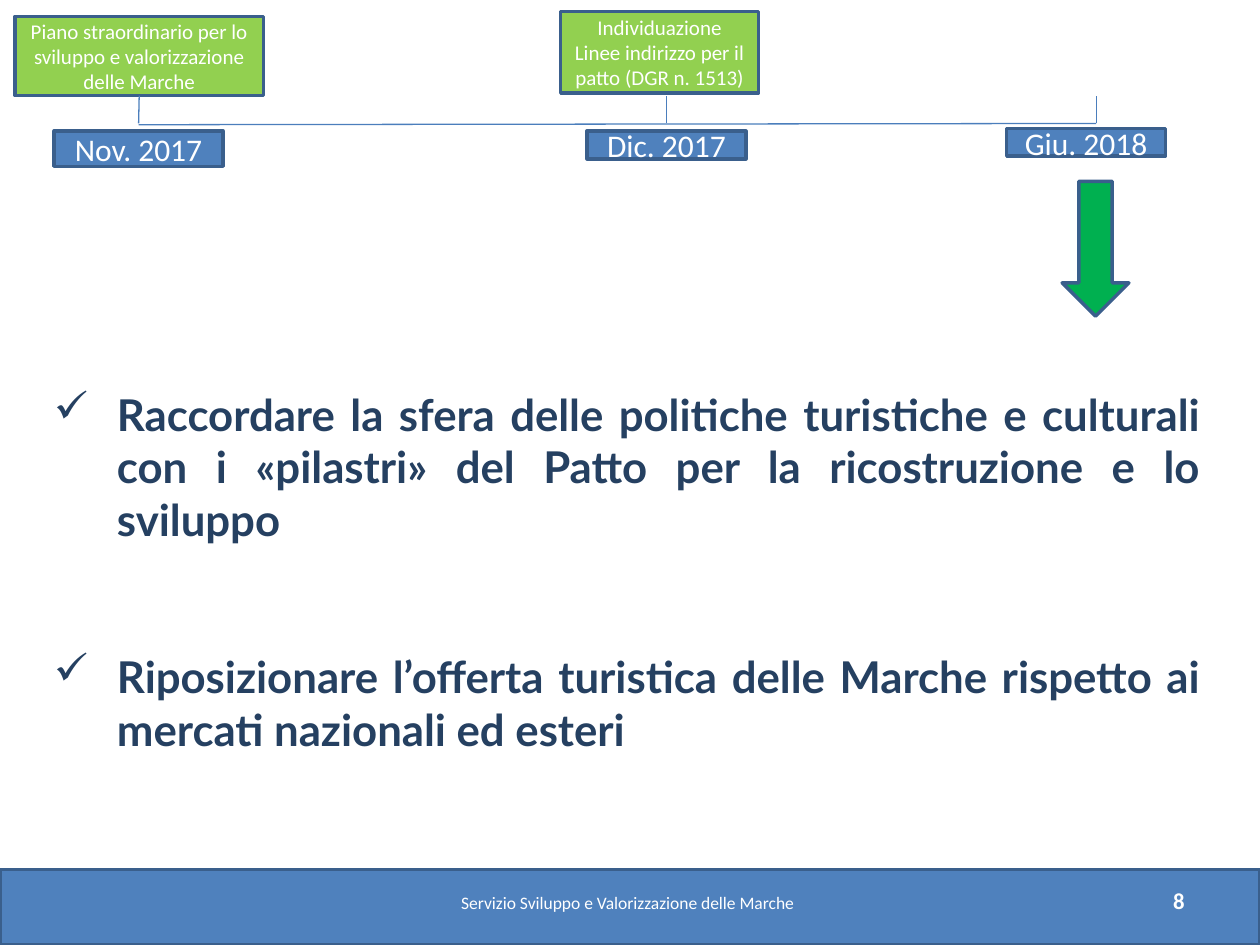
from dataclasses import dataclass

from lxml import etree
from pptx import Presentation
from pptx.dml.color import RGBColor
from pptx.enum.shapes import MSO_CONNECTOR, MSO_SHAPE
from pptx.enum.text import MSO_ANCHOR, PP_ALIGN
from pptx.oxml.ns import qn
from pptx.util import Inches, Pt

RECTANGLE, DOWN_ARROW = MSO_SHAPE.RECTANGLE, MSO_SHAPE.DOWN_ARROW
STRAIGHT = MSO_CONNECTOR.STRAIGHT
TOP, MIDDLE = MSO_ANCHOR.TOP, MSO_ANCHOR.MIDDLE
CENTER, RIGHT, JUSTIFY = PP_ALIGN.CENTER, PP_ALIGN.RIGHT, PP_ALIGN.JUSTIFY
BOTTOM_SIDE = 2

# The page is a grid of 100 columns by 75 rows of square cells.
COLUMNS, ROWS = 100, 75
CELL = Inches(0.1)


@dataclass(frozen=True)
class Theme:
    blue: str = "4F81BD"
    outline: str = "3A5F8C"
    axis: str = "4B7EBC"
    lime: str = "92D050"
    green: str = "00B050"
    navy: str = "254061"
    white: str = "FFFFFF"
    body_font: str = "Calibri"
    goal_font: str = "Lato"
    goal_size: float = 25
    date_size: float = 18
    number_size: float = 13
    event_size: float = 12
    footer_size: float = 10
    outline_width: float = 2
    axis_width: float = 0.75


THEME = Theme()


def cells(*counts):
    return [round(count * CELL) for count in counts]


def add_span(para, text, size, color=THEME.white, font=THEME.body_font, bold=False):
    span = para.add_run()
    span.text = text
    span.font.size = Pt(size)
    span.font.name = font
    span.font.bold = bold
    span.font.color.rgb = RGBColor.from_string(color)


def write_lines(box, lines, size, align=CENTER, bold=False):
    """Fill a box with one paragraph, broken between the given lines."""
    frame = box.text_frame
    frame.word_wrap = True
    frame.vertical_anchor = MIDDLE
    para = frame.paragraphs[0]
    para.alignment = align
    for index, line in enumerate(lines):
        if index:
            para.add_line_break()
        add_span(para, line, size, bold=bold)


def add_block(page, area, fill, kind=RECTANGLE):
    block = page.shapes.add_shape(kind, *cells(*area))
    block.shadow.inherit = False
    block.fill.solid()
    block.fill.fore_color.rgb = RGBColor.from_string(fill)
    block.line.color.rgb = RGBColor.from_string(THEME.outline)
    block.line.width = Pt(THEME.outline_width)
    return block


def add_label(page, area, lines, size, fill):
    label = add_block(page, area, fill)
    write_lines(label, lines, size)
    return label


def add_line(page, start, end):
    line = page.shapes.add_connector(STRAIGHT, *cells(*start, *end))
    line.line.color.rgb = RGBColor.from_string(THEME.axis)
    line.line.width = Pt(THEME.axis_width)
    etree.SubElement(line._element.spPr, qn("a:effectLst"))
    return line


def add_timeline(page):
    add_line(page, (11, 9.9), (87, 9.8))
    dates = [
        ("Nov. 2017", (4.3, 10.4, 13.4, 2.8)),
        ("Dic. 2017", (46.6, 10.4, 12.6, 2.2)),
        ("Giu. 2018", (79.9, 10.2, 12.6, 2.2)),
    ]
    for date, area in dates:
        add_label(page, area, [date], THEME.date_size, THEME.blue)
    plan = add_label(
        page, (1.2, 1.3, 19.7, 6.3),
        ["Piano straordinario per lo sviluppo e valorizzazione", "delle Marche"],
        THEME.event_size, THEME.lime)
    add_label(
        page, (44.5, 0.9, 15.7, 6.5),
        ["Individuazione", "Linee indirizzo per il patto (DGR n. 1513)"],
        THEME.event_size, THEME.lime)
    ticks = [add_line(page, (column, 9.8), (column, 7.6)) for column in (11, 52.9, 87)]
    ticks[0].end_connect(plan, BOTTOM_SIDE)
    add_block(page, (84.3, 14.4, 5.3, 10.7), THEME.green, DOWN_ARROW)


def add_check_mark(para, indent):
    properties = para._p.get_or_add_pPr()
    properties.set("marL", str(indent))
    properties.set("indent", str(-indent))
    etree.SubElement(properties, qn("a:buChar")).set("char", "✓")


def add_goals(page, goals):
    box = page.shapes.add_textbox(*cells(3.3, 27, 92.9, 41.5))
    frame = box.text_frame
    frame.word_wrap = True
    frame.vertical_anchor = TOP
    frame.margin_top = cells(3.75)[0]
    for index, goal in enumerate(goals):
        para = frame.add_paragraph() if index else frame.paragraphs[0]
        para.alignment = JUSTIFY
        if index:
            para.space_before = Pt(2.4 * THEME.goal_size)
        add_check_mark(para, cells(5)[0])
        add_span(para, goal, THEME.goal_size, THEME.navy, THEME.goal_font, bold=True)


def add_footer(page):
    add_block(page, (0, ROWS - 6, COLUMNS, 6), THEME.blue)
    number = page.shapes.add_textbox(*cells(79.9, 69.5, 15.1, 4))
    write_lines(number, ["8"], THEME.number_size, RIGHT, bold=True)
    office = page.shapes.add_textbox(*cells(28.9, 69.6, 41.8, 4))
    write_lines(office, ["Servizio Sviluppo e Valorizzazione delle Marche"], THEME.footer_size)


def main():
    deck = Presentation()
    deck.slide_width, deck.slide_height = cells(COLUMNS, ROWS)
    page = deck.slides.add_slide(deck.slide_layouts.get_by_name("Blank"))
    add_footer(page)
    add_goals(page, [
        "Raccordare la sfera delle politiche turistiche e culturali con i "
        "«pilastri» del Patto per la ricostruzione e lo sviluppo",
        "Riposizionare l’offerta turistica delle Marche rispetto ai mercati "
        "nazionali ed esteri",
    ])
    add_timeline(page)
    deck.save("out.pptx")


if __name__ == "__main__":
    main()
